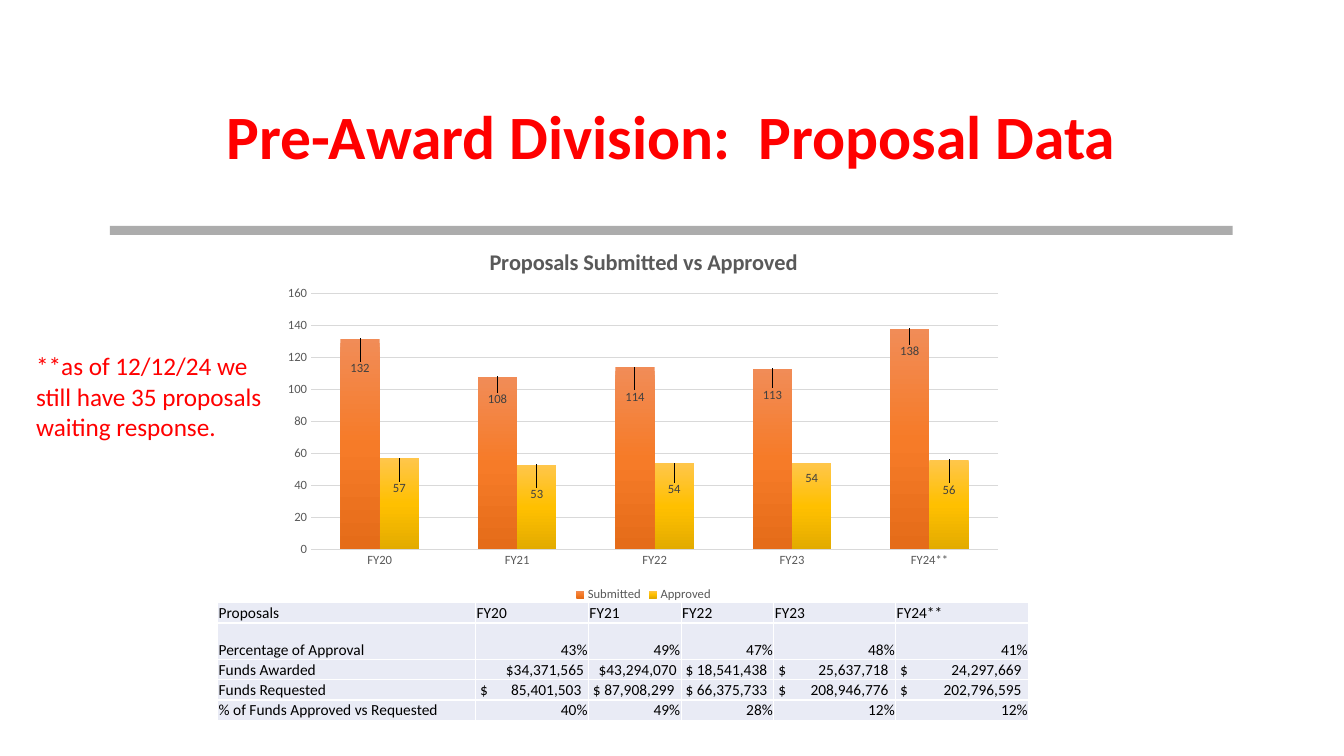
"""Build the proposal data slide with its chart and funding table."""
from copy import deepcopy

from lxml import etree
from pptx import Presentation
from pptx.chart.data import CategoryChartData
from pptx.dml.color import RGBColor
from pptx.enum.chart import XL_CHART_TYPE as ChartType
from pptx.enum.chart import XL_LABEL_POSITION as LabelPosition
from pptx.enum.chart import XL_LEGEND_POSITION as LegendPosition
from pptx.enum.chart import XL_TICK_MARK as TickMark
from pptx.enum.shapes import MSO_SHAPE as ShapeType
from pptx.enum.text import MSO_ANCHOR as Anchor
from pptx.enum.text import PP_ALIGN as Align
from pptx.oxml.ns import qn
from pptx.util import Pt

RED = RGBColor(0xFF, 0x00, 0x00)
BLACK = RGBColor(0x00, 0x00, 0x00)
WHITE = RGBColor(0xFF, 0xFF, 0xFF)
RULE_GRAY = RGBColor(0x80, 0x80, 0x80)
AXIS_GRAY = RGBColor(0x59, 0x59, 0x59)
LABEL_GRAY = RGBColor(0x40, 0x40, 0x40)
GRID_GRAY = RGBColor(0xD9, 0xD9, 0xD9)
CELL_BLUE = RGBColor(0xE9, 0xEB, 0xF5)
ORANGES = [RGBColor(0xF1, 0x8C, 0x57), RGBColor(0xF6, 0x7B, 0x28), RGBColor(0xE5, 0x6C, 0x19)]
GOLDS = [RGBColor(0xFF, 0xC6, 0x4B), RGBColor(0xFF, 0xC0, 0x00), RGBColor(0xE3, 0xAB, 0x00)]

YEARS = ["FY20", "FY21", "FY22", "FY23", "FY24**"]
SERIES = [
    ("Submitted", [132, 108, 114, 113, 138], ORANGES, [0.11, 0.09, 0.11, 0.1, 0.09]),
    ("Approved", [57, 53, 54, 54, 56], GOLDS, [0.11, 0.11, 0.1, 0.07, 0.11]),
]
COLUMN_WIDTHS = [184.3, 80.6, 66.2, 66.2, 87.1, 95]
ROW_HEIGHTS = [14.4, 26.2, 14.4, 14.4, 14.4]
FUNDING_ROWS = [
    ["Proposals", *YEARS],
    ["Percentage of Approval", "43%", "49%", "47%", "48%", "41%"],
    ["Funds Awarded", "$34,371,565", "$43,294,070", "$ 18,541,438",
     "$\t25,637,718", "$\t24,297,669"],
    ["Funds Requested", "$\t85,401,503", "$ 87,908,299", "$ 66,375,733",
     "$\t208,946,776", "$\t202,796,595"],
    ["% of Funds Approved vs Requested", "40%", "49%", "28%", "12%", "12%"],
]


def assign(target, **values):
    for name, value in values.items():
        setattr(target, name, value)


def add_element(parent, tag, index=None, **attributes):
    element = etree.Element(qn(tag), {name: str(value) for name, value in attributes.items()})
    parent.insert(len(parent) if index is None else index, element)
    return element


def add_layout(parent, index, **values):
    layout = add_element(parent, "c:layout", index)
    manual = add_element(layout, "c:manualLayout")
    for name, value in values.items():
        add_element(manual, f"c:{name}", val=value)


class SlideBuilder:
    font_name = "Calibri"
    inset = 0.7
    money_inset = 3.2
    number_gap = 5

    def __init__(self, presentation):
        self.slide = presentation.slides.add_slide(presentation.slide_layouts[5])

    def style(self, font, size, color, bold=False):
        assign(font, name=self.font_name, size=Pt(size), bold=bold)
        font.color.rgb = color

    def text(self, frame, text, size, color, bold=False, **paragraph_format):
        paragraph = frame.paragraphs[0]
        run = paragraph.add_run()
        run.text = text
        self.style(run.font, size, color, bold)
        assign(paragraph, **paragraph_format)
        return paragraph

    def title(self, text, left, top, width, height):
        shape = self.slide.shapes.title
        assign(shape, left=Pt(left), top=Pt(top), width=Pt(width), height=Pt(height))
        assign(shape.text_frame, vertical_anchor=Anchor.MIDDLE, word_wrap=True)
        self.text(shape.text_frame, text, 44, RED, True, alignment=Align.CENTER, line_spacing=0.9)

    def rule(self, left, top, width, height):
        shape = self.slide.shapes.add_shape(
            ShapeType.RECTANGLE, Pt(left), Pt(top), Pt(width), Pt(height))
        shape.shadow.inherit = False
        shape.fill.solid()
        shape.fill.fore_color.rgb = RULE_GRAY
        shape.line.fill.background()
        color = shape._element.spPr.find(f"{qn('a:solidFill')}/{qn('a:srgbClr')}")
        add_element(color, "a:alpha", val=65000)

    def note(self, text, left, top, width, height):
        box = self.slide.shapes.add_textbox(Pt(left), Pt(top), Pt(width), Pt(height))
        box.text_frame.word_wrap = True
        self.text(box.text_frame, text, 18, RED)

    def chart(self, title, left, top, width, height):
        data = CategoryChartData()
        data.categories = YEARS
        for name, values, _, _ in SERIES:
            data.add_series(name, values)
        chart = self.slide.shapes.add_chart(
            ChartType.COLUMN_CLUSTERED, Pt(left), Pt(top), Pt(width), Pt(height), data).chart
        self.style(chart.font, 10, BLACK)
        self.text(chart.chart_title.text_frame, title, 16, AXIS_GRAY, True)
        chart.has_legend = True
        assign(chart.legend, position=LegendPosition.BOTTOM, include_in_layout=False)
        self.style(chart.legend.font, 9, AXIS_GRAY)
        self.axes(chart)
        plot = chart.plots[0]
        assign(plot, gap_width=150, overlap=0, vary_by_categories=False)
        for series, (_, _, colors, drops) in zip(plot.series, SERIES):
            self.gradient(series, colors)
            self.labels(series, drops)

    def axes(self, chart):
        for axis in (chart.category_axis, chart.value_axis):
            assign(axis, major_tick_mark=TickMark.NONE, minor_tick_mark=TickMark.NONE)
            self.style(axis.tick_labels.font, 9, AXIS_GRAY)
        assign(chart.value_axis, minimum_scale=0, maximum_scale=160, major_unit=20,
               has_major_gridlines=True)
        chart.value_axis.format.line.fill.background()
        grid_line = chart.value_axis.major_gridlines.format.line
        for line, weight in ((chart.category_axis.format.line, 1), (grid_line, 0.75)):
            line.color.rgb = GRID_GRAY
            line.width = Pt(weight)
        plot_area = next(chart.element.iter(qn("c:plotArea"))) if hasattr(
            chart, "element") else next(chart._chartSpace.iter(qn("c:plotArea")))
        for layout in plot_area.findall(qn("c:layout")):
            plot_area.remove(layout)
        add_layout(plot_area, 0, layoutTarget="inner", xMode="edge", yMode="edge",
                   x=0.05, y=0.17, w=0.93, h=0.68)

    def gradient(self, series, colors):
        fill = series.format.fill
        fill.gradient()
        fill.gradient_angle = 270
        stops = next(series._element.iter(qn("a:gsLst")))
        stops.append(deepcopy(stops[0]))
        for index, (stop, color) in enumerate(zip(fill.gradient_stops, colors)):
            stop.position = index / 2
            stop.color.rgb = color

    def labels(self, series, drops):
        series.data_labels.show_value = True
        self.style(series.data_labels.font, 9, LABEL_GRAY)
        for index in range(len(drops)):
            label = series.points[index].data_label
            self.style(label.font, 9, LABEL_GRAY)
            label.position = LabelPosition.OUTSIDE_END
        for element, drop in zip(series._element.iter(qn("c:dLbl")), drops):
            add_layout(element, 1, x=0, y=drop)

    def table(self, left, top):
        table = self.slide.shapes.add_table(
            len(ROW_HEIGHTS), len(COLUMN_WIDTHS), Pt(left), Pt(top),
            Pt(sum(COLUMN_WIDTHS)), Pt(sum(ROW_HEIGHTS))).table
        assign(table, first_row=False, horz_banding=False)
        for column, width in zip(table.columns, COLUMN_WIDTHS):
            column.width = Pt(width)
        for row, height, texts in zip(table.rows, ROW_HEIGHTS, FUNDING_ROWS):
            row.height = Pt(height)
            for cell, text, width in zip(row.cells, texts, COLUMN_WIDTHS):
                self.cell(cell, text, width)

    def cell(self, cell, text, width):
        side = self.money_inset if text.startswith("$") else self.inset
        assign(cell, margin_left=Pt(side), margin_right=Pt(side), margin_top=Pt(self.inset),
               margin_bottom=0, vertical_anchor=Anchor.BOTTOM)
        cell.fill.solid()
        cell.fill.fore_color.rgb = CELL_BLUE
        right = text.endswith("%") or text[0] == "$" and text[1].isdigit()
        paragraph = self.text(cell.text_frame, text, 11, BLACK,
                              alignment=Align.RIGHT if right else Align.LEFT)
        if "\t" in text:
            tabs = add_element(paragraph._p.get_or_add_pPr(), "a:tabLst")
            add_element(tabs, "a:tab", pos=Pt(width - side - self.number_gap), algn="r")
        for index, edge in enumerate(("lnL", "lnR", "lnT", "lnB")):
            line = add_element(cell._tc.get_or_add_tcPr(), f"a:{edge}", index, w=Pt(1))
            add_element(add_element(line, "a:solidFill"), "a:srgbClr", val=WHITE)


def main():
    presentation = Presentation()
    assign(presentation, slide_width=Pt(960), slide_height=Pt(540))
    builder = SlideBuilder(presentation)
    builder.title("Pre-Award Division:  Proposal Data", 68.4, 47.5, 823, 104.4)
    builder.rule(78.5, 161.3, 802, 6.5)
    builder.note("**as of 12/12/24 we still have 35 proposals waiting response.",
                 18.7, 247, 176.4, 72.7)
    builder.chart("Proposals Submitted vs Approved", 195.8, 164.2, 527.8, 268.6)
    builder.table(155.5, 430.6)
    presentation.save("out.pptx")


if __name__ == "__main__":
    main()
